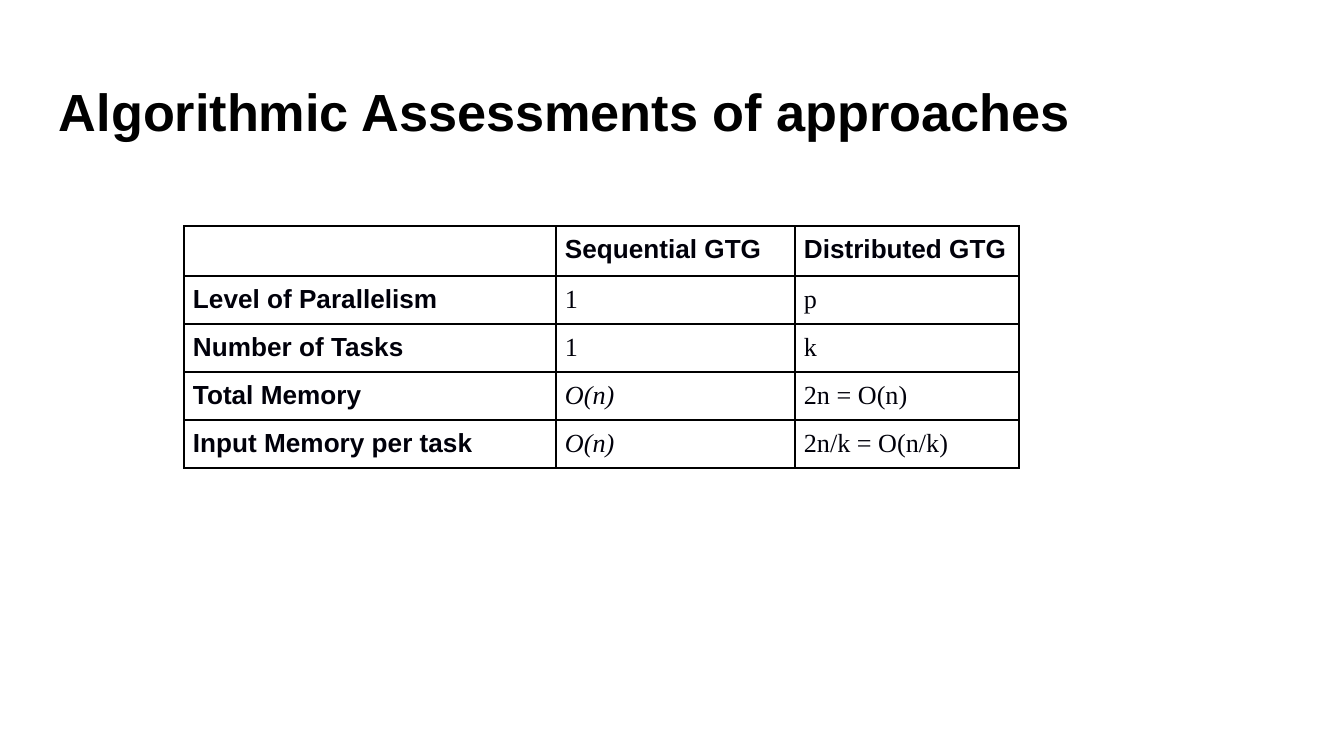
from pptx import Presentation
from pptx.dml.color import RGBColor
from pptx.enum.text import MSO_ANCHOR, PP_ALIGN
from pptx.oxml.ns import qn
from pptx.util import Pt
from lxml.etree import SubElement

EMU_PER_PX = 914400 / 134.4
HEADING_FONT = "Arial"
VALUE_FONT = "Times New Roman"
ASSESSMENTS = [
    ("", "Sequential GTG", "Distributed GTG"),
    ("Level of Parallelism", "1", "p"),
    ("Number of Tasks", "1", "k"),
    ("Total Memory", "O(n)", "2n = O(n)"),
    ("Input Memory per task", "O(n)", "2n/k = O(n/k)"),
]


def px(length):
    """Turn a length in px into EMU."""
    return round(length * EMU_PER_PX)


def color(hex_string):
    """Turn a hex string into a colour."""
    return RGBColor.from_string(hex_string)


def write_text(frame, text, *, size, font=HEADING_FONT, fill="000000",
               bold=False, italic=False, align=PP_ALIGN.LEFT, inset=13):
    """Write one formatted paragraph into a text frame."""
    frame.margin_left = frame.margin_right = px(inset)
    frame.margin_top = frame.margin_bottom = px(inset)
    frame.word_wrap = True
    paragraph = frame.paragraphs[0]
    paragraph.alignment = align
    if not text:
        SubElement(paragraph._p, qn("a:endParaRPr"), sz=str(size * 100))
        return
    run = paragraph.add_run()
    run.text = text
    run.font.size = Pt(size)
    run.font.name = font
    run.font.bold = bold
    run.font.italic = italic
    run.font.color.rgb = color(fill)


def add_borders(cell, fill="000000", width=1):
    """Draw a solid line on all four sides of a cell."""
    properties = cell._tc.get_or_add_tcPr()
    for index, side in enumerate(("a:lnL", "a:lnR", "a:lnT", "a:lnB")):
        line = properties.makeelement(qn(side), {"w": str(Pt(width))})
        solid = SubElement(line, qn("a:solidFill"))
        SubElement(solid, qn("a:srgbClr"), val=fill)
        properties.insert(index, line)


def place_title(slide, left, top, width, height):
    """Place the slide title in its placeholder."""
    title = slide.shapes.title
    title.left, title.top = px(left), px(top)
    title.width, title.height = px(width), px(height)
    title.text_frame.vertical_anchor = MSO_ANCHOR.TOP
    write_text(title.text_frame, "Algorithmic Assessments of approaches",
               size=28, bold=True)


def place_assessments(slide, left, top, column_widths, row_height):
    """Place the table that compares the two approaches."""
    table = slide.shapes.add_table(
        len(ASSESSMENTS), len(column_widths), px(left), px(top),
        px(sum(column_widths)), px(row_height * len(ASSESSMENTS))).table
    table.first_row = table.horz_banding = False
    for column, width in zip(table.columns, column_widths):
        column.width = px(width)
    for row_index, entries in enumerate(ASSESSMENTS):
        table.rows[row_index].height = px(row_height)
        for column_index, entry in enumerate(entries):
            cell = table.cell(row_index, column_index)
            heading = row_index == 0 or column_index == 0
            cell.fill.background()
            add_borders(cell)
            write_text(cell.text_frame, entry, size=14, fill="00000A",
                       font=HEADING_FONT if heading else VALUE_FONT,
                       bold=heading,
                       italic=column_index == 1 and entry == "O(n)",
                       align=PP_ALIGN.JUSTIFY, inset=9)
            cell.margin_left = cell.margin_right = px(9)
            cell.margin_top = cell.margin_bottom = px(9)


def main():
    """Build the slide and save it."""
    presentation = Presentation()
    presentation.slide_width, presentation.slide_height = px(1344), px(756)
    slide = presentation.slides.add_slide(presentation.slide_layouts[5])
    place_title(slide, 46, 66, 1252, 85)
    place_assessments(slide, 184, 226, (372, 239, 224), 48)
    presentation.save("out.pptx")


if __name__ == "__main__":
    main()
